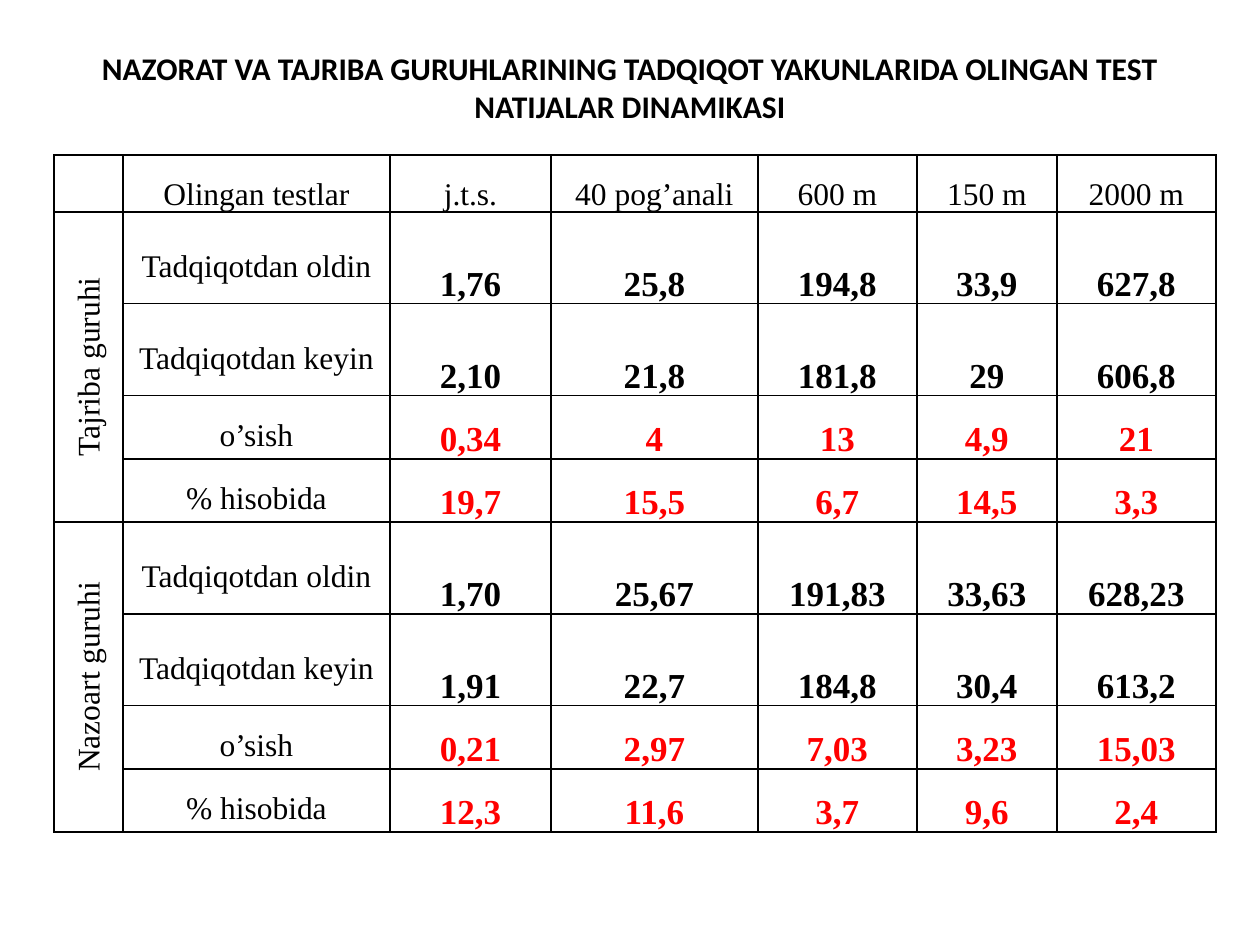
"""Build a slide with a table of test results for two groups."""
from lxml.etree import SubElement
from pptx import Presentation
from pptx.dml.color import RGBColor
from pptx.enum.text import MSO_ANCHOR, PP_ALIGN
from pptx.oxml.ns import qn
from pptx.util import Emu, Pt

EMU_PER_PX = 914400 / 126
BLACK, RED = "000000", "FF0000"
TITLE = "NAZORAT VA TAJRIBA GURUHLARINING TADQIQOT YAKUNLARIDA OLINGAN TЕST NATIJALAR DINAMIKASI"
HEADERS = ["", "Olingan tеstlar", "j.t.s.", "40 pog’anali", "600 m", "150 m", "2000 m"]
MEASURES = ["Tadqiqotdan oldin", "Tadqiqotdan kеyin", "o’sish", "% hisobida"]
MEASURE_COLORS = [BLACK, BLACK, RED, RED]
GROUPS = {
    "Tajriba guruhi": [
        ["1,76", "25,8", "194,8", "33,9", "627,8"],
        ["2,10", "21,8", "181,8", "29", "606,8"],
        ["0,34", "4", "13", "4,9", "21"],
        ["19,7", "15,5", "6,7", "14,5", "3,3"],
    ],
    "Nazoart guruhi": [
        ["1,70", "25,67", "191,83", "33,63", "628,23"],
        ["1,91", "22,7", "184,8", "30,4", "613,2"],
        ["0,21", "2,97", "7,03", "3,23", "15,03"],
        ["12,3", "11,6", "3,7", "9,6", "2,4"],
    ],
}
COLUMN_WIDTHS = [69, 267, 161, 207, 159, 140, 159]
HEADER_HEIGHT = 52
MEASURE_HEIGHTS = [92, 92, 60, 60]


def px(length):
    return Emu(round(length * EMU_PER_PX))


def rgb(color):
    return RGBColor.from_string(color)


def format_paragraph(paragraph, font_name, size, color=BLACK, bold=False):
    paragraph.alignment = PP_ALIGN.CENTER
    for run in paragraph.runs:
        run.font.name = font_name
        run.font.size = Pt(size)
        run.font.bold = bold
        run.font.color.rgb = rgb(color)


def add_title(slide):
    text_frame = slide.shapes.add_textbox(px(63), px(38), px(1134), px(97)).text_frame
    text_frame.word_wrap = True
    text_frame.vertical_anchor = MSO_ANCHOR.MIDDLE
    text_frame.text = TITLE
    format_paragraph(text_frame.paragraphs[0], "Calibri", 18, bold=True)


def style_cell(cell):
    properties = cell._tc.get_or_add_tcPr()
    for side in ("a:lnL", "a:lnR", "a:lnT", "a:lnB"):
        line = SubElement(properties, qn(side), w=str(Pt(1)))
        fill = SubElement(line, qn("a:solidFill"))
        SubElement(fill, qn("a:srgbClr"), val=BLACK)
    cell.fill.background()
    cell.margin_left = cell.margin_right = px(9)
    cell.margin_top = cell.margin_bottom = 0


def write_cell(cell, text, anchor=MSO_ANCHOR.BOTTOM, size=18, color=BLACK, bold=False):
    cell.text_frame.text = text
    cell.vertical_anchor = anchor
    paragraph = cell.text_frame.paragraphs[0]
    paragraph.line_spacing = 1.5
    format_paragraph(paragraph, "Times New Roman", size, color, bold)


def write_group(table, top_row, name, results):
    group_cell = table.cell(top_row, 0)
    group_cell.merge(table.cell(top_row + len(MEASURES) - 1, 0))
    write_cell(group_cell, name, MSO_ANCHOR.MIDDLE)
    group_cell._tc.get_or_add_tcPr().set("vert", "vert270")
    rows = zip(MEASURES, MEASURE_COLORS, results)
    for row, (measure, color, values) in enumerate(rows, top_row):
        write_cell(table.cell(row, 1), measure, MSO_ANCHOR.MIDDLE)
        for column, value in enumerate(values, 2):
            write_cell(table.cell(row, column), value, size=20, color=color, bold=True)


def add_results_table(slide):
    row_heights = [HEADER_HEIGHT] + MEASURE_HEIGHTS * len(GROUPS)
    table = slide.shapes.add_table(
        len(row_heights), len(COLUMN_WIDTHS), px(54), px(155),
        px(sum(COLUMN_WIDTHS)), px(sum(row_heights)),
    ).table
    table.first_row = table.horz_banding = False
    for column, width in zip(table.columns, COLUMN_WIDTHS):
        column.width = px(width)
    for row, height in zip(table.rows, row_heights):
        row.height = px(height)
    for cell in table.iter_cells():
        style_cell(cell)
    for column, header in enumerate(HEADERS):
        if header:
            write_cell(table.cell(0, column), header)
    for index, (name, results) in enumerate(GROUPS.items()):
        write_group(table, 1 + index * len(MEASURES), name, results)


def main():
    presentation = Presentation()
    presentation.slide_width, presentation.slide_height = px(1260), px(945)
    slide = presentation.slides.add_slide(presentation.slide_layouts[6])
    add_title(slide)
    add_results_table(slide)
    presentation.save("out.pptx")


if __name__ == "__main__":
    main()
